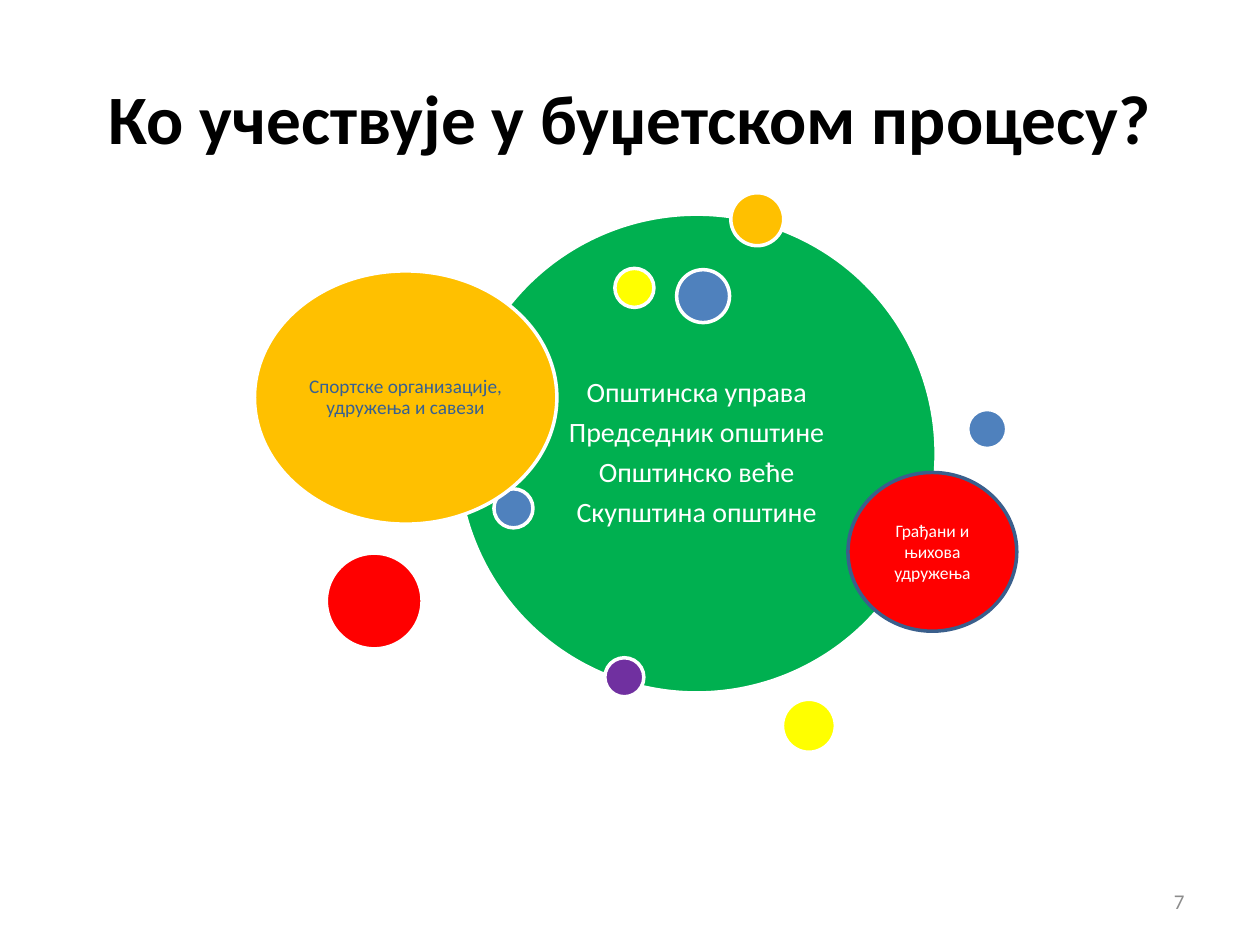
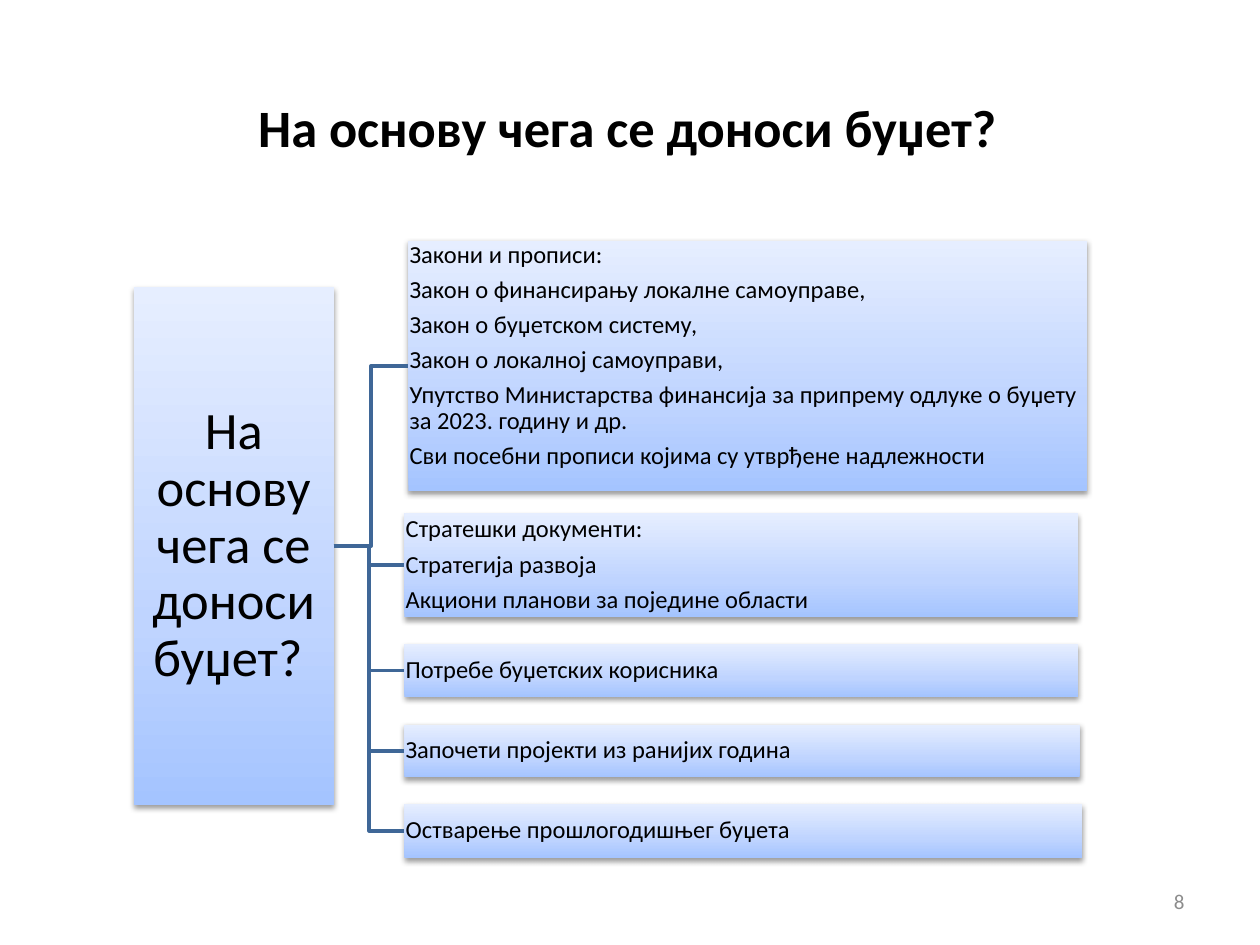
import pptx
import pptx.util
import pptx.dml.color
import pptx.enum.shapes
import pptx.enum.text
import pptx.oxml
import pptx.oxml.ns
from pptx.util import Inches

FONT = "Calibri"
COLORS = {
    "black": "000000", "white": "FFFFFF", "grey": "8C8C8C", "green": "00B050",
    "gold": "FFC000", "purple": "7030A0", "blue": "4F81BD", "yellow": "FFFF00",
    "red": "FF0000", "navy": "376092", "outline": "3A5F8C", "link": "3F6797",
    "grad_dark": "A4C4FF", "grad_mid": "BFD4FF", "grad_light": "E6EEFF",
}
GRADIENT = [(0, "grad_dark"), (35, "grad_mid"), (100, "grad_light")]
ALIGN = pptx.enum.text.PP_ALIGN
ANCHOR = pptx.enum.text.MSO_ANCHOR
SHAPE = pptx.enum.shapes.MSO_SHAPE


def rgb(name):
    return pptx.dml.color.RGBColor.from_string(COLORS[name])


def drawing_xml(markup):
    ns = pptx.oxml.ns.nsdecls("a")
    return pptx.oxml.parse_xml(markup.replace(">", f" {ns}>", 1))


def write(sp, lines, size, color, align=ALIGN.CENTER, anchor=ANCHOR.MIDDLE,
          inset=None, bold=False, spread=False):
    tf = sp.text_frame
    tf.word_wrap = True
    tf.vertical_anchor = anchor
    if inset is not None:
        tf.margin_left = tf.margin_right = Inches(inset)
        tf.margin_top = tf.margin_bottom = Inches(inset)
    for i, line in enumerate(lines):
        p = tf.add_paragraph() if i else tf.paragraphs[0]
        p.alignment = align
        if spread:
            p.line_spacing = 0.9
            p.space_after = pptx.util.Pt(round(size * 0.35, 1))
        r = p.add_run()
        r.text = line
        r.font.name = FONT
        r.font.size = pptx.util.Pt(size)
        r.font.bold = bold
        r.font.color.rgb = rgb(color)


def add_base(prs, title, box, size, number):
    s = prs.slides.add_slide(prs.slide_layouts[5])
    sp = s.shapes.title
    sp.left, sp.top, sp.width, sp.height = map(Inches, box)
    write(sp, [title], size, "black", bold=True)
    sp = s.shapes.add_textbox(*map(Inches, (7.17, 6.95, 2.33, 0.4)))
    write(sp, [str(number)], 12, "grey", ALIGN.RIGHT)
    return s


def add_bubble(s, box, fill, line="white"):
    sp = s.shapes.add_shape(SHAPE.OVAL, *map(Inches, box))
    sp.shadow.inherit = False
    sp.fill.solid()
    sp.fill.fore_color.rgb = rgb(fill)
    sp.line.color.rgb = rgb(line)
    sp.line.width = pptx.util.Pt(2)
    return sp


def add_participants(s, left, top):
    def bubble(x, y, w, h, fill, line="white"):
        return add_bubble(s, (left + x, top + y, w, h), fill, line)

    sp = bubble(1.61, 0.17, 3.8, 3.8, "green")
    write(sp, ["Општинска управа", "Председник општине", "Општинско веће",
               "Скупштина општине"], 16, "white", inset=0.07, spread=True)
    dots = [
        (3.78, 0, 0.42, "gold"), (2.78, 3.69, 0.31, "purple"),
        (5.66, 1.72, 0.31, "blue"), (4.19, 4.02, 0.42, "yellow"),
        (2.86, 0.6, 0.31, "yellow"), (1.9, 2.35, 0.31, "blue"),
        (3.35, 0.61, 0.42, "blue"), (0.57, 2.86, 0.76, "red"),
    ]
    for x, y, d, fill in dots:
        bubble(x, y, d, d, fill)
    sp = bubble(0, 0.62, 2.4, 2.01, "gold")
    write(sp, ["Спортске организације, удружења и савези"], 11, "navy",
          inset=0.05, spread=True)
    sp = bubble(4.71, 2.22, 1.34, 1.26, "red", "outline")
    write(sp, ["Грађани и њихова удружења"], 10, "white")


def add_panel(s, box):
    sp = s.shapes.add_shape(SHAPE.RECTANGLE, *map(Inches, box))
    sp.line.fill.background()
    stops = "".join(f'<a:gs pos="{pos * 1000}"><a:srgbClr val="{COLORS[c]}"/></a:gs>'
                    for pos, c in GRADIENT)
    sp.fill.background()
    props = sp._element.spPr
    old = props.find(pptx.oxml.ns.qn("a:noFill"))
    props.replace(old, drawing_xml(
        f'<a:gradFill rotWithShape="1"><a:gsLst>{stops}</a:gsLst>'
        '<a:lin ang="16200000" scaled="0"/></a:gradFill>'))
    props.append(drawing_xml(
        '<a:effectLst><a:outerShdw blurRad="39370" dist="20320" dir="5400000" '
        f'rotWithShape="0"><a:srgbClr val="{COLORS["black"]}">'
        '<a:alpha val="38000"/></a:srgbClr></a:outerShdw></a:effectLst>'))
    return sp


def add_branch(s, root, panel):
    c = s.shapes.add_connector(pptx.enum.shapes.MSO_CONNECTOR.ELBOW, 0, 0, 0, 0)
    c.begin_connect(root, 3)
    c.end_connect(panel, 1)
    c.line.color.rgb = rgb("link")
    c.line.width = pptx.util.Pt(2)
    c._element.spPr.append(drawing_xml("<a:effectLst></a:effectLst>"))


def add_sources(s, left, top):
    root = add_panel(s, (left, top + 0.37, 1.59, 4.11))
    write(root, ["На основу чега се доноси буџет? "], 30, "black",
          inset=0.02, spread=True)
    panels = [
        (2.18, 0, 5.39, 1.99, ANCHOR.TOP, [
            "Закони и прописи:",
            "Закон о финансирању локалне самоуправе,",
            "Закон о буџетском систему,",
            "Закон о локалној самоуправи,",
            "Упутство Министарства финансија за припрему одлуке о буџету за 2023. годину и др.",
            "Сви посебни прописи којима су утврђене надлежности"]),
        (2.15, 2.16, 5.35, 0.83, ANCHOR.MIDDLE, [
            "Стратешки документи:",
            "Стратегија развоја",
            "Акциони планови за поједине области"]),
        (2.15, 3.2, 5.35, 0.42, ANCHOR.MIDDLE, ["Потребе буџетских корисника"]),
        (2.15, 3.84, 5.36, 0.42, ANCHOR.MIDDLE, ["Започети пројекти из ранијих година"]),
        (2.15, 4.47, 5.38, 0.43, ANCHOR.MIDDLE, ["Остварење прошлогодишњег буџета"]),
    ]
    for x, y, w, h, anchor, lines in panels:
        panel = add_panel(s, (left + x, top + y, w, h))
        write(panel, lines, 14, "black", ALIGN.LEFT, anchor, 0.01, spread=True)
        add_branch(s, root, panel)


def main():
    prs = pptx.Presentation()
    prs.slide_width, prs.slide_height = Inches(10), Inches(7.5)
    s = add_base(prs, "Ко учествује у буџетском процесу?", (0.5, 0.3, 9, 1.25), 39.6, 7)
    add_participants(s, 2.02, 1.53)
    s = add_base(prs, "На основу чега се доноси буџет?", (0.48, 0.54, 9, 0.93), 30, 8)
    add_sources(s, 1.06, 1.91)
    prs.save("out.pptx")


if __name__ == "__main__":
    main()
